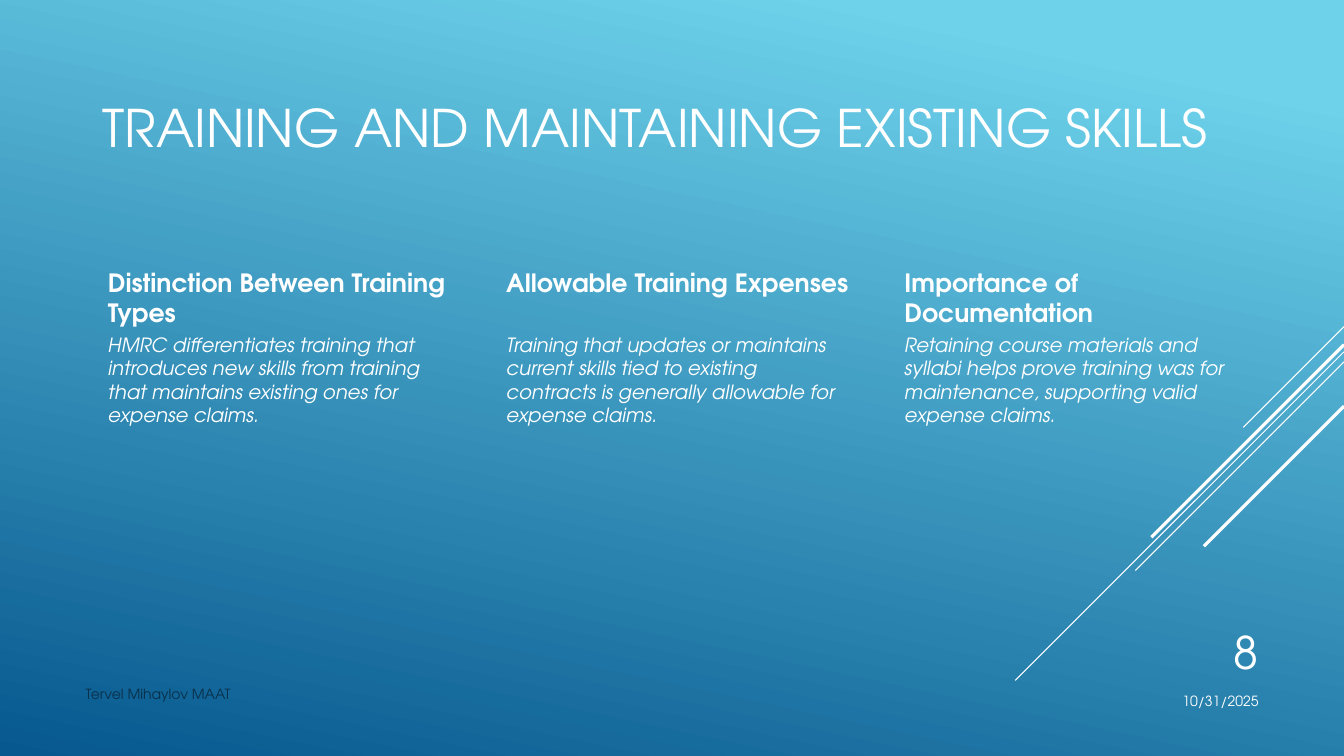
from lxml.etree import SubElement
from pptx import Presentation
from pptx.dml.color import RGBColor
from pptx.enum.shapes import MSO_CONNECTOR
from pptx.enum.text import MSO_ANCHOR, PP_ALIGN
from pptx.oxml.ns import qn
from pptx.util import Emu, Pt

PX = 9144  # 100 px to the inch
SLIDE_W, SLIDE_H = 1333, 750
FONT = "TeX Gyre Adventor"
WHITE = RGBColor(0xFF, 0xFF, 0xFF)
NAVY = RGBColor(0x0A, 0x30, 0x4A)
SKY = RGBColor(0x6E, 0xD2, 0xEB)
OCEAN = RGBColor(0x06, 0x58, 0x8E)

COLUMN_LEFT, COLUMN_STEP, COLUMN_W = 92, 395, 359
COLUMNS = [
    ("Distinction Between Training Types",
     "HMRC differentiates training that introduces new skills from training "
     "that maintains existing ones for expense claims."),
    ("Allowable Training Expenses",
     "Training that updates or maintains current skills tied to existing "
     "contracts is generally allowable for expense claims."),
    ("Importance of Documentation",
     "Retaining course materials and syllabi helps prove training was for "
     "maintenance, supporting valid expense claims."),
]
# y at the right edge, run of the 45° line, width in points
RAYS = [(324, 100, 0.75), (349, 326, 0.75), (359, 207, 0.75),
        (342, 191, 2.25), (403, 139, 2.25)]


def px(n):
    return Emu(n * PX)


def paint_background(s):
    fill = s.background.fill
    fill.gradient()
    fill.gradient_angle = 258
    for stop, position, color in zip(fill.gradient_stops, (0.1, 1), (SKY, OCEAN)):
        stop.position = position
        stop.color.rgb = color


def add_text(s, text, x, y, w, h, size=10, color=WHITE, bold=False,
             italic=False, align=PP_ALIGN.LEFT, anchor=MSO_ANCHOR.TOP,
             insets=(10, 5, 10, 5)):
    """Add a one-paragraph text box; insets are left, top, right, bottom."""
    tf = s.shapes.add_textbox(px(x), px(y), px(w), px(h)).text_frame
    tf.word_wrap = True
    tf.vertical_anchor = anchor
    tf.margin_left, tf.margin_top, tf.margin_right, tf.margin_bottom = map(px, insets)
    p = tf.paragraphs[0]
    p.alignment = align
    r = p.add_run()
    r.text = text
    r.font.name = FONT
    r.font.size = Pt(size)
    r.font.bold = bold
    r.font.italic = italic
    r.font.color.rgb = color


def add_ray(s, y, run, width):
    """Draw a line from the right edge down to the left at 45°."""
    line = s.shapes.add_connector(MSO_CONNECTOR.STRAIGHT, px(SLIDE_W), px(y),
                                  px(SLIDE_W - run), px(y + run))
    line.line.color.rgb = WHITE
    line.line.width = Pt(width)
    SubElement(line._element.spPr, qn("a:effectLst"))


def add_column(s, index, heading, body):
    x = COLUMN_LEFT + index * COLUMN_STEP
    add_text(s, heading, x, 262, COLUMN_W, 66, size=18, bold=True,
             insets=(15, 3, 3, 3))
    add_text(s, body, x, 328, COLUMN_W, 382, size=14, italic=True,
             insets=(15, 2, 2, 2))


def main():
    prs = Presentation()
    prs.slide_width, prs.slide_height = px(SLIDE_W), px(SLIDE_H)
    s = prs.slides.add_slide(prs.slide_layouts[6])
    paint_background(s)
    for ray in RAYS:
        add_ray(s, *ray)
    add_text(s, "TRAINING AND MAINTAINING EXISTING SKILLS", 92, 40, 1150, 122,
             size=37, anchor=MSO_ANCHOR.BOTTOM)
    add_text(s, "Tervel Mihaylov MAAT", 75, 675, 825, 40, color=NAVY)
    for index, (heading, body) in enumerate(COLUMNS):
        add_column(s, index, heading, body)
    add_text(s, "10/31/2025", 1083, 675, 175, 40,
             align=PP_ALIGN.RIGHT, anchor=MSO_ANCHOR.MIDDLE)
    add_text(s, "8", 1133, 610, 125, 73, size=32,
             align=PP_ALIGN.RIGHT, anchor=MSO_ANCHOR.MIDDLE)
    prs.save("out.pptx")


if __name__ == "__main__":
    main()
